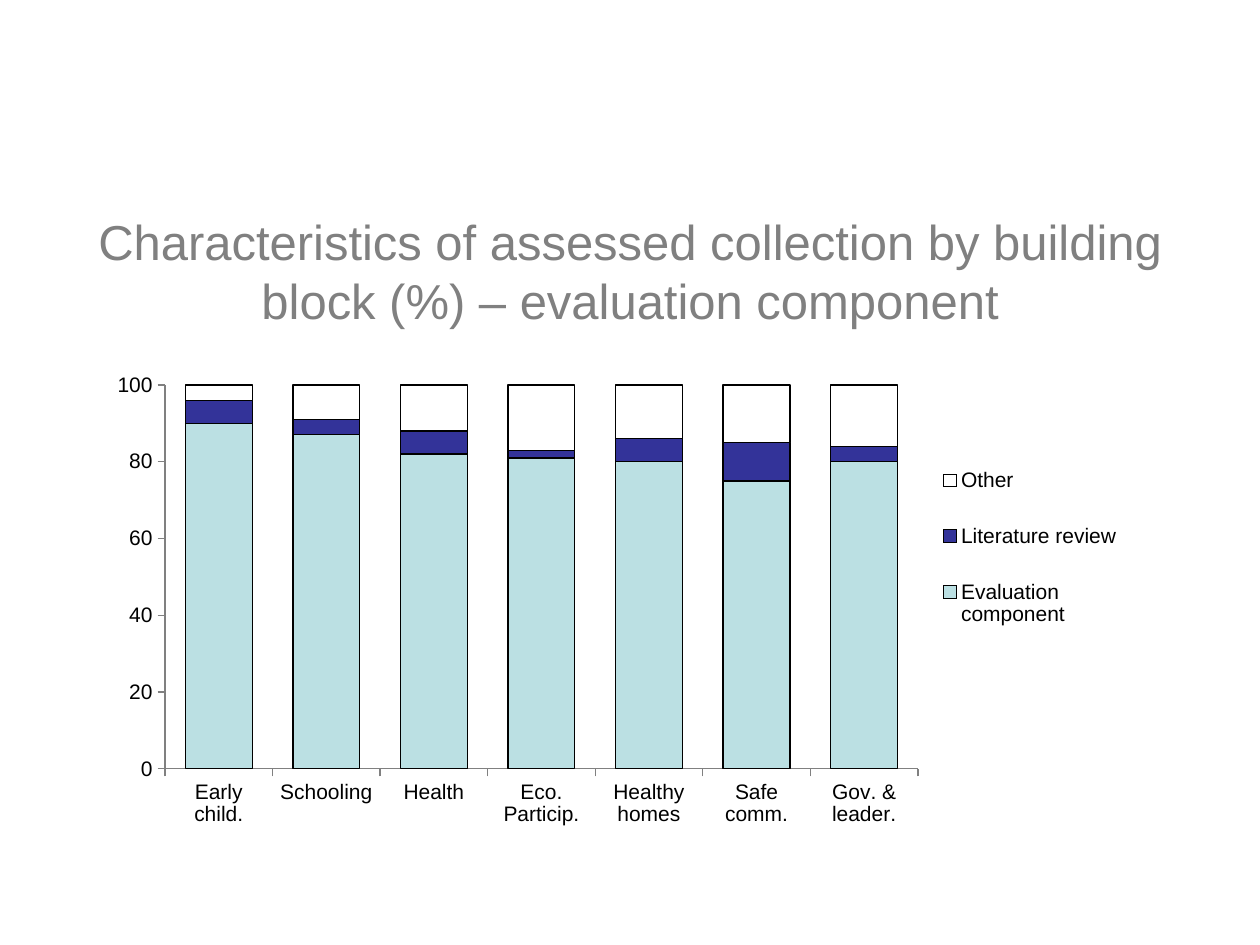
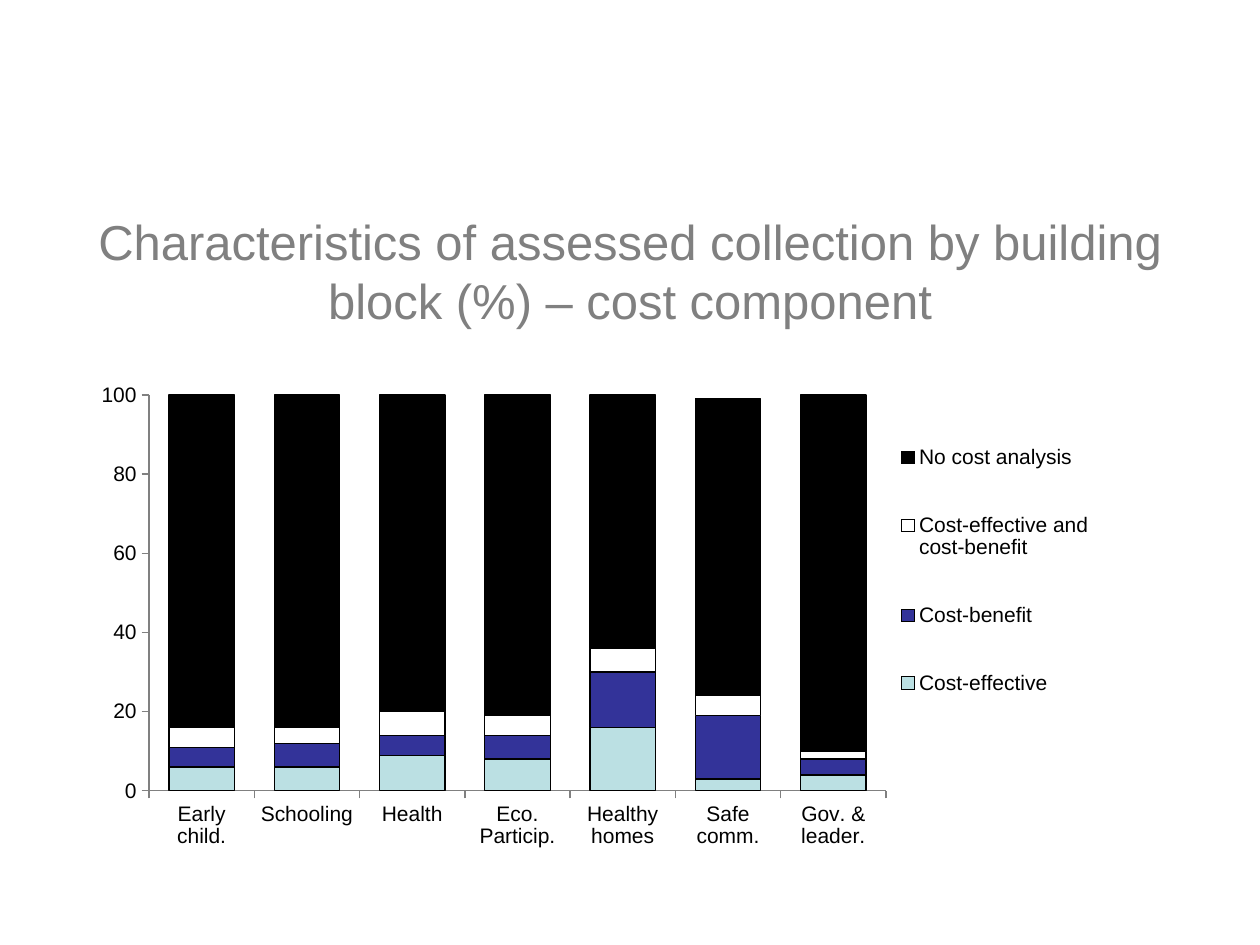
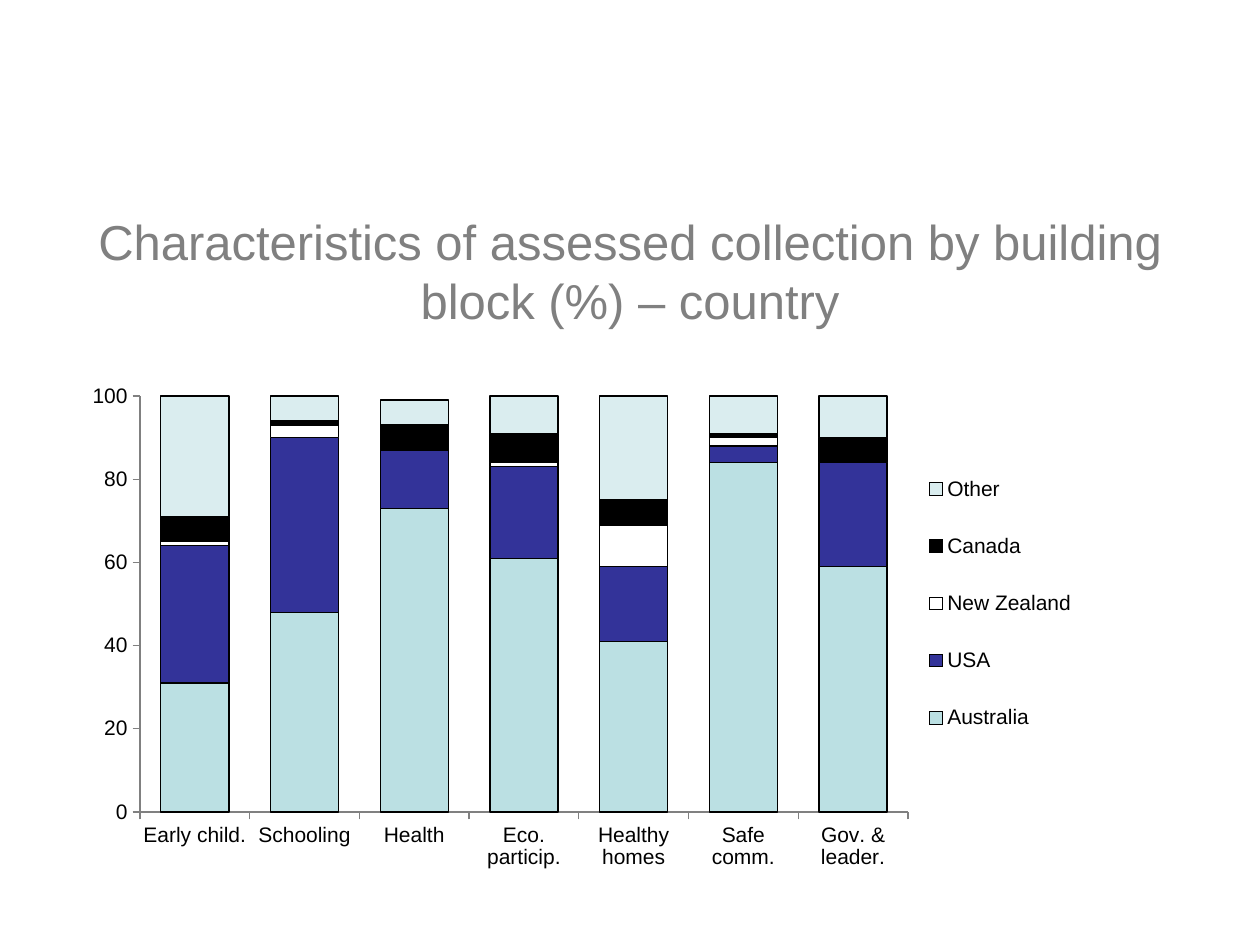
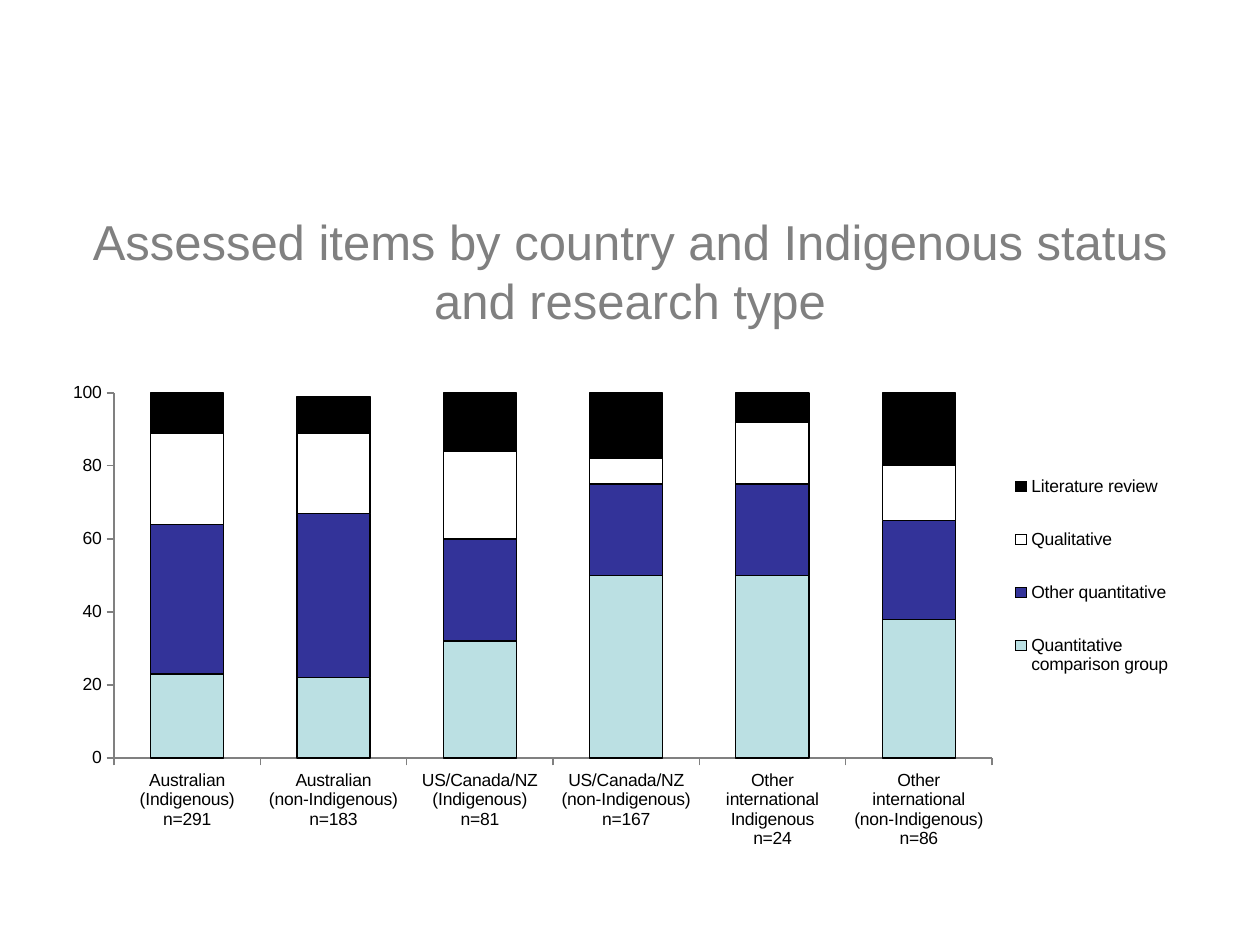
from collections import namedtuple

from lxml.etree import SubElement
from pptx import Presentation
from pptx.chart.data import CategoryChartData
from pptx.dml.color import RGBColor
from pptx.enum.chart import XL_CHART_TYPE, XL_LEGEND_POSITION, XL_TICK_MARK
from pptx.enum.text import MSO_ANCHOR, PP_ALIGN
from pptx.oxml.ns import qn
from pptx.util import Pt

PX_PER_INCH = 126
EMU_PER_PX = 914400 / PX_PER_INCH
FONT = "Arial"
GREY, BLACK, WHITE = "808080", "000000", "FFFFFF"
SERIES_COLORS = ["BBE0E3", "333399", WHITE, BLACK, "DAEDEF"]

Box = namedtuple("Box", "left top width height")
PAGE = Box(0, 0, 1260, 945)
TITLE_BOX = Box(63, 191, 1134, 158)

BLOCKS = ["Early child.", "Schooling", "Health", "Eco. Particip.",
          "Healthy homes", "Safe comm.", "Gov. & leader."]
COUNTRY_BLOCKS = [name.replace("Particip", "particip") for name in BLOCKS]
POPULATIONS = [
    "Australian\n(Indigenous)\nn=291",
    "Australian\n(non-Indigenous)\nn=183",
    "US/Canada/NZ\n(Indigenous)\nn=81",
    "US/Canada/NZ\n(non-Indigenous)\nn=167",
    "Other international\nIndigenous\nn=24",
    "Other international\n(non-Indigenous)\nn=86",
]
BLOCK_TITLE = "Characteristics of assessed collection by building block (%) – "

# The plot and legend boxes are measured from the corner of the chart box.
SLIDES = [
    dict(
        title=BLOCK_TITLE + "evaluation component",
        box=Box(105, 344, 1032, 504),
        plot_box=Box(60, 41, 753, 384),
        legend_box=Box(827, 92, 196, 223),
        categories=BLOCKS,
        series={
            "Evaluation component": [90, 87, 82, 81, 80, 75, 80],
            "Literature review": [6, 4, 6, 2, 6, 10, 4],
            "Other": [5, 9, 12, 17, 14, 15, 16],
        },
    ),
    dict(
        title=BLOCK_TITLE + "cost component",
        box=Box(95, 354, 1012, 504),
        plot_box=Box(54, 41, 737, 396),
        legend_box=Box(799, 47, 202, 339),
        categories=BLOCKS,
        series={
            "Cost-effective": [6, 6, 9, 8, 16, 3, 4],
            "Cost-benefit": [5, 6, 5, 6, 14, 16, 4],
            "Cost-effective and cost-benefit": [5, 4, 6, 5, 6, 5, 2],
            "No cost analysis": [85, 85, 80, 82, 65, 75, 90],
        },
    ),
    dict(
        title=BLOCK_TITLE + "country",
        box=Box(84, 363, 1022, 507),
        plot_box=Box(56, 33, 768, 416),
        legend_box=Box(835, 80, 163, 321),
        categories=COUNTRY_BLOCKS,
        series={
            "Australia": [31, 48, 73, 61, 41, 84, 59],
            "USA": [33, 42, 14, 22, 18, 4, 25],
            "New Zealand": [1, 3, 0, 1, 10, 2, 0],
            "Canada": [6, 1, 6, 7, 6, 1, 6],
            "Other": [30, 6, 6, 9, 25, 9, 10],
        },
    ),
    dict(
        title="Assessed items by country and Indigenous status and research type",
        box=Box(54, 344, 1131, 505),
        plot_box=Box(60, 49, 878, 366),
        legend_box=Box(953, 100, 170, 265),
        categories=POPULATIONS,
        series={
            "Quantitative comparison group": [23, 22, 32, 50, 50, 38],
            "Other quantitative": [41, 45, 28, 25, 25, 27],
            "Qualitative": [25, 22, 24, 7, 17, 15],
            "Literature review": [11, 10, 16, 18, 8, 20],
        },
        font_size=10,
        gap=100,
    ),
]


def px(length):
    return round(length * EMU_PER_PX)


def emu_box(box):
    return [px(length) for length in box]


def color(hex_value):
    return RGBColor.from_string(hex_value)


def add_title(page, text, box):
    frame = page.shapes.add_textbox(*emu_box(box)).text_frame
    frame.word_wrap = True
    frame.vertical_anchor = MSO_ANCHOR.MIDDLE
    para = frame.paragraphs[0]
    para.alignment = PP_ALIGN.CENTER
    span = para.add_run()
    span.text = text
    span.font.name = FONT
    span.font.size = Pt(28)
    span.font.color.rgb = color(GREY)


def make_layout(parent, part, chart_box, inner=False):
    """Fix a chart part to a box measured from the chart's corner."""
    for old in parent.findall(qn("c:layout")):
        parent.remove(old)
    layout = SubElement(parent, qn("c:layout"))
    manual = SubElement(layout, qn("c:manualLayout"))
    settings = [("layoutTarget", "inner")] if inner else []
    settings += [("xMode", "edge"), ("yMode", "edge"),
                 ("x", part.left / chart_box.width),
                 ("y", part.top / chart_box.height),
                 ("w", part.width / chart_box.width),
                 ("h", part.height / chart_box.height)]
    for name, value in settings:
        SubElement(manual, qn(f"c:{name}")).set("val", str(value))
    return layout


def style_axes(chart):
    for axis in (chart.category_axis, chart.value_axis):
        axis.has_major_gridlines = False
        axis.major_tick_mark = XL_TICK_MARK.OUTSIDE
        axis.minor_tick_mark = XL_TICK_MARK.NONE
        axis.format.line.color.rgb = color(GREY)
        axis.format.line.width = Pt(0.75)
    scale = chart.value_axis
    scale.minimum_scale, scale.maximum_scale, scale.major_unit = 0, 100, 20
    scale.tick_labels.number_format = "0"
    scale.tick_labels.number_format_is_linked = False


def style_columns(chart, gap):
    plot = chart.plots[0]
    plot.gap_width = gap
    plot.overlap = 100
    plot.vary_by_categories = False
    for series, fill in zip(plot.series, SERIES_COLORS):
        series.format.fill.solid()
        series.format.fill.fore_color.rgb = color(fill)
        series.format.line.color.rgb = color(BLACK)
        series.format.line.width = Pt(0.75)


def place_chart_parts(chart, box, plot_box, legend_box):
    plot_area = chart._chartSpace.xpath("c:chart/c:plotArea")[0]
    plot_area.insert(0, make_layout(plot_area, plot_box, box, inner=True))
    chart.has_legend = True
    chart.legend.position = XL_LEGEND_POSITION.RIGHT
    chart.legend.include_in_layout = False
    legend = chart._chartSpace.xpath("c:chart/c:legend")[0]
    layout = make_layout(legend, legend_box, box)
    legend.find(qn("c:legendPos")).addnext(layout)


def add_stacked_chart(page, box, plot_box, legend_box, categories, series,
                      font_size=12, gap=61):
    data = CategoryChartData(number_format="0")
    data.categories = categories
    for name, values in series.items():
        data.add_series(name, values)
    chart = page.shapes.add_chart(
        XL_CHART_TYPE.COLUMN_STACKED, *emu_box(box), data).chart
    chart.has_title = False
    chart.font.name = FONT
    chart.font.size = Pt(font_size)
    chart.font.color.rgb = color(BLACK)
    style_axes(chart)
    style_columns(chart, gap)
    place_chart_parts(chart, box, plot_box, legend_box)


def add_chart_slide(deck, title, **chart_settings):
    page = deck.slides.add_slide(deck.slide_layouts[6])
    page.background.fill.solid()
    page.background.fill.fore_color.rgb = color(WHITE)
    add_title(page, title, TITLE_BOX)
    add_stacked_chart(page, **chart_settings)


def main():
    deck = Presentation()
    deck.slide_width, deck.slide_height = px(PAGE.width), px(PAGE.height)
    for settings in SLIDES:
        add_chart_slide(deck, **settings)
    deck.save("out.pptx")


if __name__ == "__main__":
    main()
